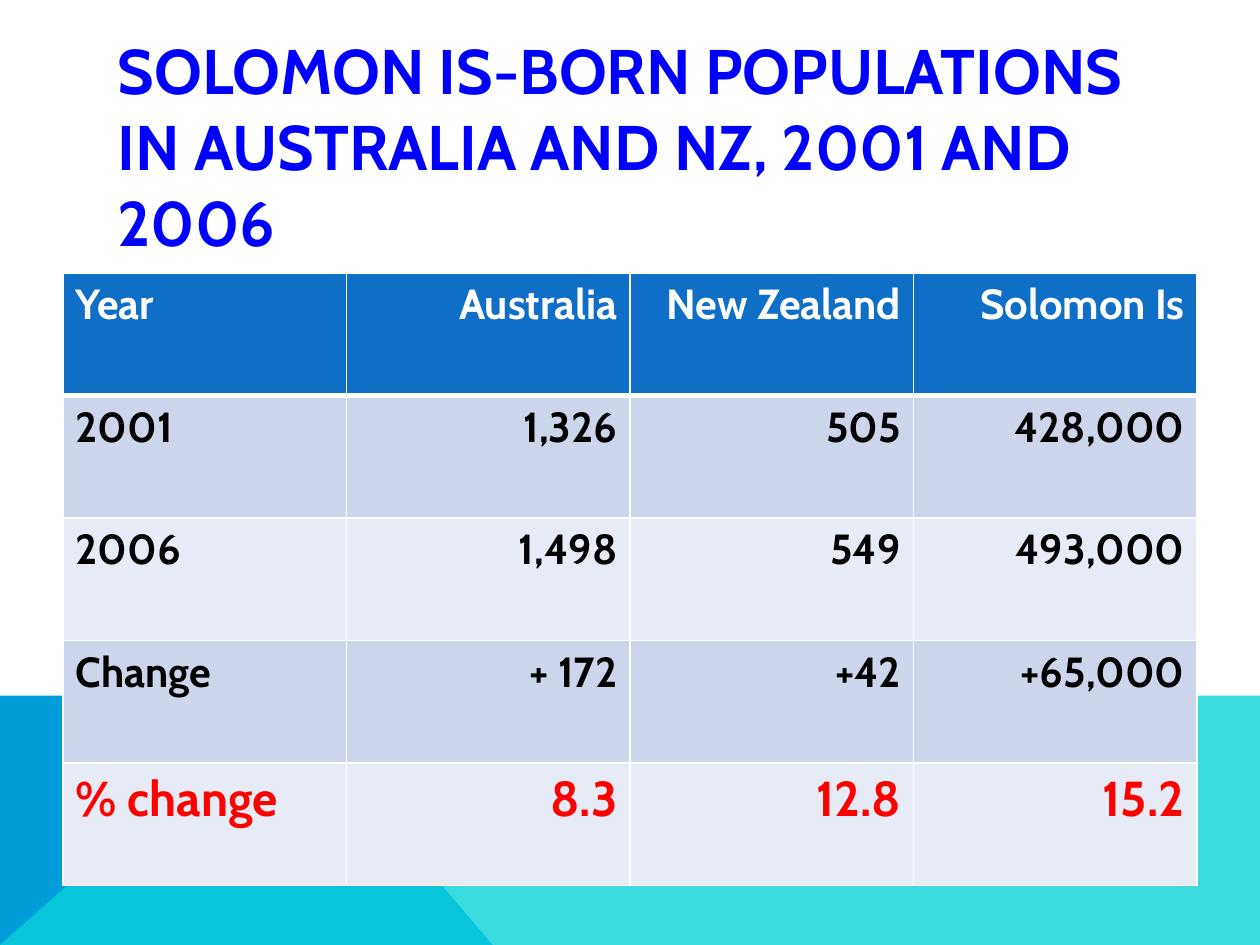
"""Build a slide comparing Solomon Islands-born populations in Australia and New Zealand."""
from dataclasses import dataclass

from lxml import etree
from pptx import Presentation
from pptx.dml.color import RGBColor
from pptx.enum.text import MSO_ANCHOR, MSO_AUTO_SIZE, PP_ALIGN
from pptx.oxml.ns import qn
from pptx.util import Pt

LEFT, RIGHT = PP_ALIGN.LEFT, PP_ALIGN.RIGHT
MIDDLE = MSO_ANCHOR.MIDDLE
NO_AUTOFIT = MSO_AUTO_SIZE.NONE
TITLE_ONLY = 5
WIDTH, HEIGHT = 720, 540

TITLE = "SOLOMON IS-BORN POPULATIONS IN AUSTRALIA AND NZ, 2001 AND 2006"
POPULATIONS = [
    ["Year", "Australia", "New Zealand", "Solomon Is"],
    ["2001", "1,326", "505", "428,000"],
    ["2006", "1,498", "549", "493,000"],
    ["Change", "+ 172", "+42", "+65,000"],
    ["% change", "8.3", "12.8", "15.2"],
]


@dataclass(frozen=True)
class Theme:
    font: str = "Cabin"
    title: str = "0000FF"
    header: str = "0F6FC6"
    bands: tuple = ("E7EBF5", "CCD5EA")
    text: str = "000000"
    highlight: str = "FF0000"
    white: str = "FFFFFF"
    blue_wave: str = "009DD9"
    aqua_wave: str = "0BD0D9"
    title_size: int = 36
    body_size: int = 24
    highlight_size: int = 28


def write(frame, text, *, font, size, color, align=LEFT):
    paragraph = frame.paragraphs[0]
    paragraph.alignment = align
    run = paragraph.add_run()
    run.text = text
    run.font.name = font
    run.font.size = Pt(size)
    run.font.bold = True
    run.font.color.rgb = RGBColor.from_string(color)


class SlideBuilder:
    def __init__(self, slide, theme):
        self.slide = slide
        self.theme = theme

    def wave(self, points, color, opacity=100):
        start, *rest = [(Pt(x), Pt(y)) for x, y in points]
        outline = self.slide.shapes.build_freeform(*start)
        outline.add_line_segments(rest, close=True)
        band = outline.convert_to_shape()
        band.shadow.inherit = False
        band.line.fill.background()
        band.fill.solid()
        band.fill.fore_color.rgb = RGBColor.from_string(color)
        if opacity < 100:
            tint = band.fill._xPr.find(f".//{qn('a:srgbClr')}")
            etree.SubElement(tint, qn("a:alpha"), val=str(opacity * 1000))

    def title(self, text, left, top, width, height):
        heading = self.slide.shapes.title
        heading.left, heading.top = Pt(left), Pt(top)
        heading.width, heading.height = Pt(width), Pt(height)
        frame = heading.text_frame
        frame.word_wrap = True
        frame.auto_size = NO_AUTOFIT
        frame.vertical_anchor = MIDDLE
        write(frame, text, font=self.theme.font, size=self.theme.title_size,
              color=self.theme.title)

    def borders(self, cell, bottom):
        properties = cell._tc.get_or_add_tcPr()
        widths = {"lnL": 1, "lnR": 1, "lnT": 1, "lnB": bottom}
        for position, (side, width) in enumerate(widths.items()):
            line = etree.Element(qn(f"a:{side}"), w=str(Pt(width)))
            fill = etree.SubElement(line, qn("a:solidFill"))
            etree.SubElement(fill, qn("a:srgbClr"), val=self.theme.white)
            properties.insert(position, line)

    def row_style(self, index, last):
        theme = self.theme
        if index == 0:
            return theme.header, theme.white, theme.body_size
        band = theme.bands[index % 2]
        if index == last:
            return band, theme.highlight, theme.highlight_size
        return band, theme.text, theme.body_size

    def table(self, rows, left, top, width, height):
        grid = self.slide.shapes.add_table(
            len(rows), len(rows[0]), Pt(left), Pt(top), Pt(width), Pt(height)).table
        for row_index, values in enumerate(rows):
            background, color, size = self.row_style(row_index, len(rows) - 1)
            for column_index, value in enumerate(values):
                cell = grid.cell(row_index, column_index)
                cell.fill.solid()
                cell.fill.fore_color.rgb = RGBColor.from_string(background)
                self.borders(cell, bottom=1 if row_index else 3)
                write(cell.text_frame, value, font=self.theme.font, size=size,
                      color=color, align=RIGHT if column_index else LEFT)


def main():
    presentation = Presentation()
    presentation.slide_width, presentation.slide_height = Pt(WIDTH), Pt(HEIGHT)
    slide = presentation.slides.add_slide(presentation.slide_layouts[TITLE_ONLY])
    theme = Theme()
    builder = SlideBuilder(slide, theme)
    crest, crest_end, slope_end = 397.5, 160.5, 281.5
    builder.wave([(0, HEIGHT), (0, crest), (crest_end, crest), (slope_end, HEIGHT)],
                 theme.blue_wave)
    builder.wave([(0, HEIGHT), (crest_end, crest), (WIDTH, crest), (WIDTH, HEIGHT)],
                 theme.aqua_wave, opacity=80)
    builder.title(TITLE, 60, 42, 597, 82)
    builder.table(POPULATIONS, 36, 156, 648, 350)
    presentation.save("out.pptx")


if __name__ == "__main__":
    main()
